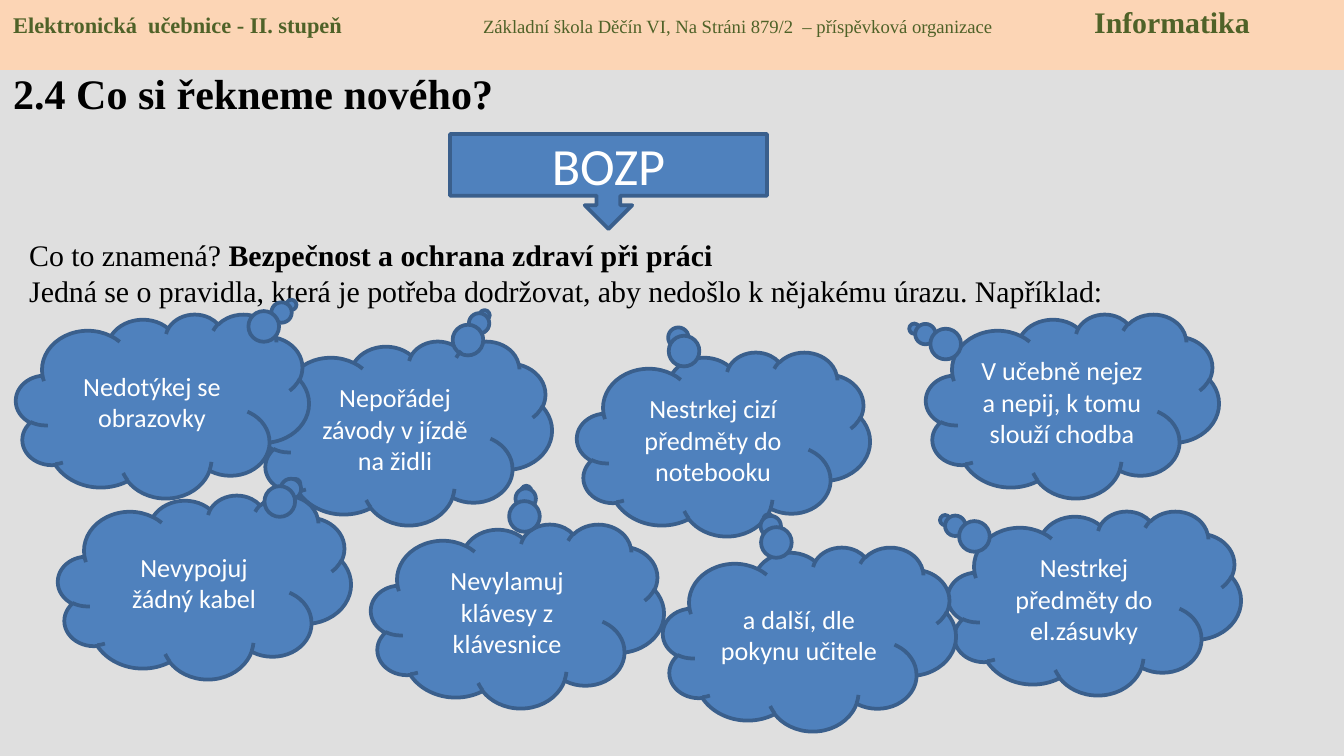
from lxml.etree import SubElement
from pptx import Presentation
from pptx.dml.color import RGBColor
from pptx.enum.shapes import MSO_SHAPE
from pptx.enum.text import MSO_ANCHOR, PP_ALIGN
from pptx.oxml.ns import qn
from pptx.util import Emu, Pt

SCALE = 914400 / 134.4  # EMU in one px
HUES = {
    "back": "DFDFDF", "band": "FCD5B5", "green": "4F6228",
    "blue": "4F81BD", "edge": "3A5F8C", "black": "000000", "white": "FFFFFF",
}
SERIF, SANS = "Times New Roman", "Calibri"


def add(kind, box, fill=None, edge=None):
    """Add a shape, or a text box when kind is None; box is in px."""
    place = [Emu(round(n * SCALE)) for n in box]
    if kind is None:
        return slide.shapes.add_textbox(*place)
    shape = slide.shapes.add_shape(kind, *place)
    shape.shadow.inherit = False
    shape.fill.solid()
    shape.fill.fore_color.rgb = RGBColor.from_string(HUES[fill])
    if edge:
        shape.line.color.rgb = RGBColor.from_string(HUES[edge])
        shape.line.width = Pt(2)
    else:
        shape.line.fill.background()
    return shape


def write(shape, lines, hue, name, align, anchor):
    """Fill a shape with lines, each a list of (text, size, bold)."""
    frame = shape.text_frame
    frame.word_wrap = True
    frame.vertical_anchor = anchor
    for i, runs in enumerate(lines):
        para = frame.add_paragraph() if i else frame.paragraphs[0]
        para.alignment = align
        for text, size, bold in runs:
            run = para.add_run()
            run.text = text
            run.font.color.rgb = RGBColor.from_string(HUES[hue])
            form = {"name": name, "size": Pt(size), "bold": bold}
            for key, value in form.items():
                setattr(run.font, key, value)


deck = Presentation()
deck.slide_width = Emu(round(1344 * SCALE))
deck.slide_height = Emu(round(756 * SCALE))
slide = deck.slides.add_slide(deck.slide_layouts[6])
slide.background.fill.solid()
slide.background.fill.fore_color.rgb = RGBColor.from_string(HUES["back"])

# Title
title = add(None, (0, 62, 1210, 62))
write(title, [[("2.4 Co si řekneme nového?", 22.5, True)]],
      "black", SERIF, PP_ALIGN.LEFT, MSO_ANCHOR.MIDDLE)

# Header band, its three parts set apart by tab stops
band = add(MSO_SHAPE.RECTANGLE, (0, -3, 1344, 73), "band")
write(band, [[
    ("Elektronická  učebnice - II. stupeň\t", 12, True),
    ("Základní škola Děčín VI, Na Stráni 879/2  – příspěvková organizace\t", 10, False),
    ("Informatika", 16, True),
]], "green", SERIF, PP_ALIGN.LEFT, MSO_ANCHOR.TOP)
props = band.text_frame.paragraphs[0]._p.get_or_add_pPr()
tabs = SubElement(props, qn("a:tabLst"))
for stop in (470, 1081):
    SubElement(tabs, qn("a:tab"), pos=str(round(stop * SCALE)), algn="l")

# Topic with its arrow
topic = add(MSO_SHAPE.DOWN_ARROW_CALLOUT, (450, 134, 317, 95), "blue", "edge")
write(topic, [[("BOZP", 28, False)]],
      "white", SANS, PP_ALIGN.CENTER, MSO_ANCHOR.MIDDLE)

# Meaning of the topic
body = add(None, (16, 230, 1270, 122))
write(body, [
    [("Co to znamená? ", 16, False),
     ("Bezpečnost a ochrana zdraví při práci", 16, True)],
    [("Jedná se o pravidla, která je potřeba dodržovat, aby nedošlo "
      "k nějakému úrazu. Například:", 16, False)],
], "black", SERIF, PP_ALIGN.JUSTIFY, MSO_ANCHOR.TOP)

# Rules in clouds: left, top, tail across, tail down, text
RULES = [
    (371, 524, 0.03, -0.68, "Nevylamuj klávesy z klávesnice"),
    (926, 314, -0.54, -0.42, "V učebně nejez a nepij, k tomu slouží chodba"),
    (577, 352, -0.16, -0.6, "Nestrkej cizí předměty do notebooku"),
    (259, 341, 0.27, -0.64, "Nepořádej závody v jízdě na židli"),
    (948, 511, -0.51, -0.45, "Nestrkej předměty do el.zásuvky"),
    (58, 495, 0.31, -0.56, "Nevypojuj žádný kabel"),
    (663, 547, -0.14, -0.65, "a další, dle pokynu učitele"),
    (16, 314, 0.44, -0.55, "Nedotýkej se obrazovky"),
]
for left, top, across, down, text in RULES:
    cloud = add(MSO_SHAPE.CLOUD_CALLOUT, (left, top, 293, 184), "blue", "edge")
    cloud.adjustments[0] = across
    cloud.adjustments[1] = down
    write(cloud, [[(text, 14, False)]],
          "white", SANS, PP_ALIGN.CENTER, MSO_ANCHOR.MIDDLE)

deck.save("out.pptx")
